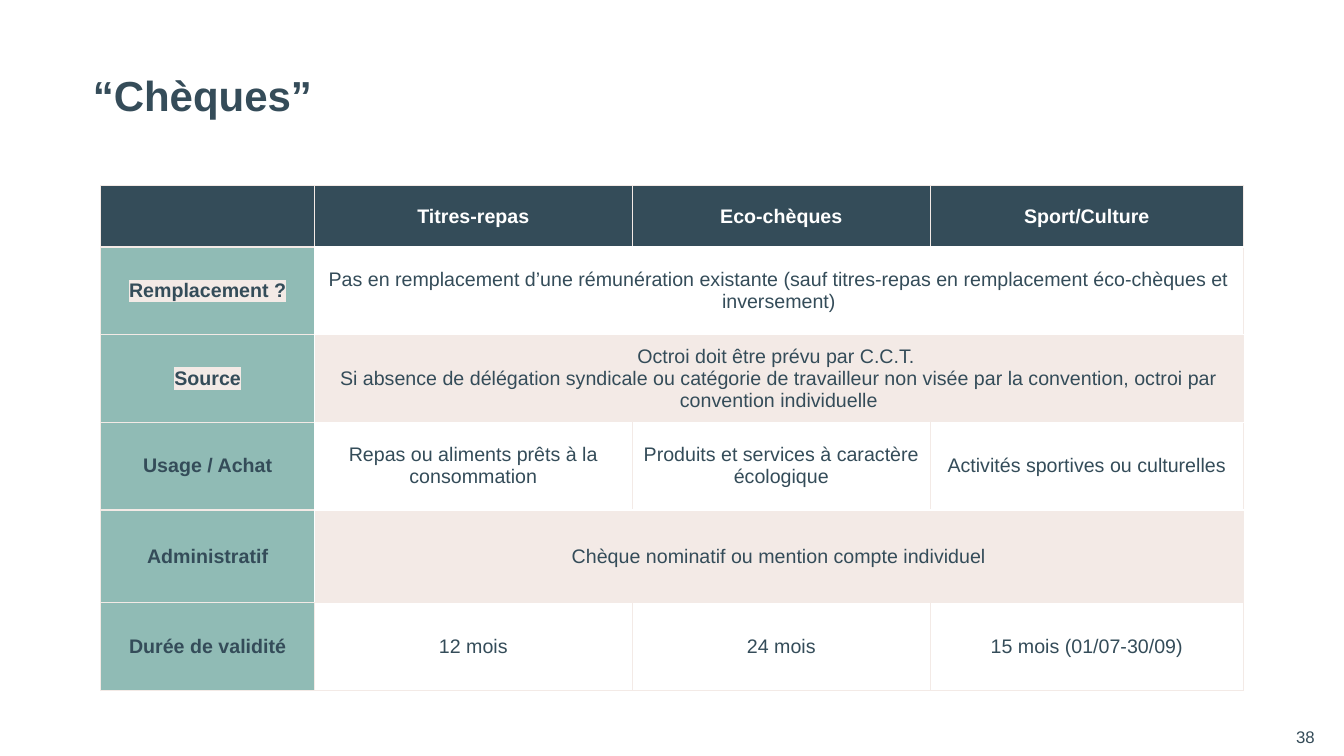
from dataclasses import dataclass

from lxml.etree import SubElement
from pptx import Presentation
from pptx.dml.color import RGBColor as RGB
from pptx.enum.text import MSO_ANCHOR as Anchor, PP_ALIGN as Align
from pptx.oxml.ns import qn
from pptx.util import Inches, Pt


@dataclass(frozen=True)
class Theme:
    font: str = "Arial"
    ink: str = "354C59"
    navy: str = "344C59"
    sage: str = "90BBB5"
    shell: str = "F3EAE6"
    white: str = "FFFFFF"
    title_size: int = 30
    table_size: int = 14
    number_size: int = 12
    border: int = Pt(1)


THEME = Theme()
COLUMN_WIDTHS = [2.12, 3.15, 2.96, 3.1]
ROW_HEIGHTS = [0.61, 0.87, 0.87, 0.87, 0.92, 0.87]
LAST_ROW = len(ROW_HEIGHTS) - 1
HIGHLIGHTED = ("Remplacement ?", "Source")
ROWS = [
    ["", "Titres-repas", "Eco-chèques", "Sport/Culture"],
    ["Remplacement ?",
     "Pas en remplacement d’une rémunération existante "
     "(sauf titres-repas en remplacement éco-chèques et inversement)"],
    ["Source",
     "Octroi doit être prévu par C.C.T. \n"
     "Si absence de délégation syndicale ou catégorie de travailleur "
     "non visée par la convention, octroi par convention individuelle"],
    ["Usage / Achat", "Repas ou aliments prêts à la consommation",
     "Produits et services à caractère écologique",
     "Activités sportives ou culturelles"],
    ["Administratif", "Chèque nominatif ou mention compte individuel"],
    ["Durée de validité", "12 mois", "24 mois", "15 mois (01/07-30/09)"],
]


def apply(target, values):
    for name, value in values.items():
        setattr(target, name, value)


def write(frame, text, size, color, bold, align):
    frame.text = text
    for paragraph in frame.paragraphs:
        paragraph.alignment = align
        for run in paragraph.runs:
            apply(run.font, {"name": THEME.font, "size": Pt(size), "bold": bold})
            run.font.color.rgb = RGB.from_string(color)


def add_label(slide, box, text, size, bold, align):
    frame = slide.shapes.add_textbox(*map(Inches, box)).text_frame
    apply(frame, {"margin_left": 0, "margin_right": 0, "margin_top": 0,
                  "margin_bottom": 0, "word_wrap": True,
                  "vertical_anchor": Anchor.MIDDLE})
    write(frame, text, size, THEME.ink, bold, align)
    return frame


def add_title(slide, box):
    title = add_label(slide, box, "“Chèques”", THEME.title_size, True, Align.LEFT)
    title.paragraphs[0].line_spacing = 0.9


def add_slide_number(slide, box):
    add_label(slide, box, "38", THEME.number_size, False, Align.RIGHT)


def highlight(run):
    color_fill = run.font._element.find(qn("a:solidFill"))
    marker = SubElement(run.font._element, qn("a:highlight"))
    SubElement(marker, qn("a:srgbClr"), val=THEME.shell)
    color_fill.addnext(marker)


def draw_borders(cell, row, column):
    inner_row = 0 < row < LAST_ROW
    white_edges = {
        "a:lnL": inner_row and column == 1,
        "a:lnR": inner_row and column == 0,
        "a:lnT": inner_row and column > 0,
        "a:lnB": row < LAST_ROW - 1 and column > 0,
    }
    properties = cell._tc.get_or_add_tcPr()
    for position, (edge, is_white) in enumerate(white_edges.items()):
        line = SubElement(properties, qn(edge), w=str(THEME.border))
        fill = SubElement(line, qn("a:solidFill"))
        SubElement(fill, qn("a:srgbClr"), val=THEME.white if is_white else THEME.shell)
        properties.insert(position, line)


def cell_fill(row, column):
    if row == 0:
        return THEME.navy
    if column == 0:
        return THEME.sage
    return THEME.white if row % 2 else THEME.shell


def add_comparison(slide, box):
    table = slide.shapes.add_table(
        len(ROW_HEIGHTS), len(COLUMN_WIDTHS), *map(Inches, box)).table
    for column, width in zip(table.columns, COLUMN_WIDTHS):
        column.width = Inches(width)
    for row, height in zip(table.rows, ROW_HEIGHTS):
        row.height = Inches(height)

    for r, texts in enumerate(ROWS):
        if len(texts) == 2:
            table.cell(r, 1).merge(table.cell(r, len(COLUMN_WIDTHS) - 1))
        for c in range(len(COLUMN_WIDTHS)):
            cell = table.cell(r, c)
            apply(cell, {"margin_left": Inches(0.07), "margin_right": Inches(0.07),
                         "margin_top": 0, "margin_bottom": 0,
                         "vertical_anchor": Anchor.MIDDLE})
            cell.fill.solid()
            cell.fill.fore_color.rgb = RGB.from_string(cell_fill(r, c))
            draw_borders(cell, r, c)
        for c, text in enumerate(texts):
            frame = table.cell(r, c).text_frame
            write(frame, text, THEME.table_size, THEME.navy if r else THEME.white,
                  r == 0 or c == 0, Align.CENTER)
            if text in HIGHLIGHTED:
                highlight(frame.paragraphs[0].runs[0])


def main():
    deck = Presentation()
    apply(deck, {"slide_width": Inches(13.33), "slide_height": Inches(7.5)})
    slide = deck.slides.add_slide(deck.slide_layouts[6])
    add_slide_number(slide, (12.22, 7.21, 0.82, 0.2))
    add_title(slide, (0.92, 0.4, 9.35, 1.15))
    add_comparison(slide, (1, 1.84, sum(COLUMN_WIDTHS), sum(ROW_HEIGHTS)))
    deck.save("out.pptx")


if __name__ == "__main__":
    main()
